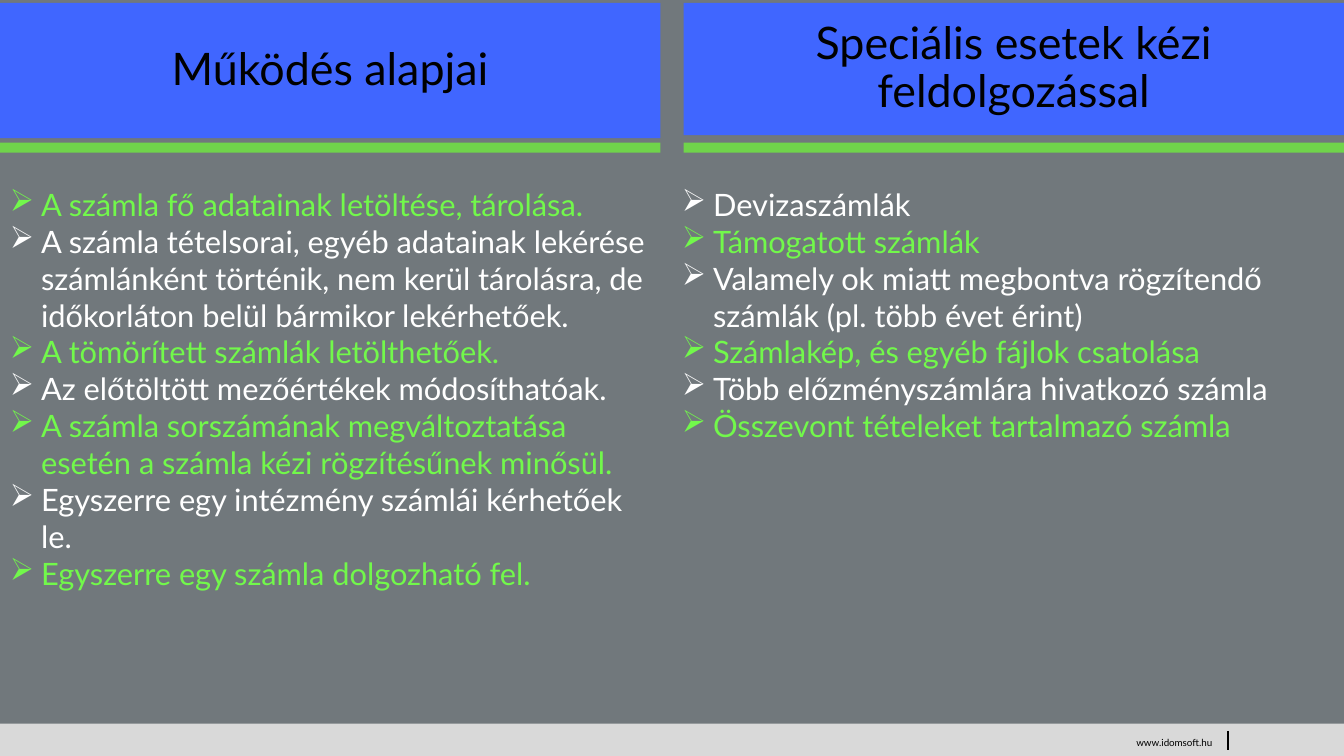
"""Build a two-column slide: headed panels with alternating coloured bullets."""
from dataclasses import dataclass
from itertools import cycle

from lxml.etree import SubElement
from pptx import Presentation
from pptx.dml.color import RGBColor
from pptx.enum.shapes import MSO_CONNECTOR, MSO_SHAPE
from pptx.enum.text import MSO_ANCHOR, MSO_AUTO_SIZE, PP_ALIGN
from pptx.oxml.ns import qn
from pptx.shapes.autoshape import Shape
from pptx.slide import Slide
from pptx.text.text import _Paragraph as Paragraph
from pptx.util import Inches, Length, Pt

WIDTH, HEIGHT = Inches(13.33), Inches(7.5)
FONT = "Lato"
INDENT = Inches(0.31)
GRAY = RGBColor(0x71, 0x78, 0x7C)
LIGHT = RGBColor(0xD9, 0xD9, 0xD9)
BLUE = RGBColor(0x40, 0x66, 0xFF)
BAR_GREEN = RGBColor(0x70, 0xD4, 0x4B)
GREEN = RGBColor(0x72, 0xF8, 0x4B)
WHITE = RGBColor(0xFF, 0xFF, 0xFF)
BLACK = RGBColor(0x00, 0x00, 0x00)


@dataclass(frozen=True)
class Box:
    """Position and size in percent of the slide."""
    x: float
    y: float
    w: float
    h: float

    def emu(self) -> tuple[Length, Length, Length, Length]:
        return across(self.x), down(self.y), across(self.w), down(self.h)


@dataclass(frozen=True)
class Column:
    """A headed list whose items alternate between two colours."""
    title: str
    head: Box
    bar: Box
    body: Box
    colors: tuple[RGBColor, RGBColor]
    items: tuple[str, ...]
    justified: tuple[int, ...] = ()


COLUMNS = (
    Column(
        "Működés alapjai",
        Box(0, 0.4, 49.14, 17.87),
        Box(0, 18.87, 49.14, 1.33),
        Box(0, 23.87, 49.14, 65.47),
        (GREEN, WHITE),
        (
            "A számla fő adatainak letöltése, tárolása.",
            "A számla tételsorai, egyéb adatainak lekérése számlánként történik, "
            "nem kerül tárolásra, de időkorláton belül bármikor lekérhetőek.",
            "A tömörített számlák letölthetőek.",
            "Az előtöltött mezőértékek módosíthatóak.",
            "A számla sorszámának megváltoztatása esetén a számla kézi "
            "rögzítésűnek minősül.",
            "Egyszerre egy intézmény számlái kérhetőek le.",
            "Egyszerre egy számla dolgozható fel.",
        ),
    ),
    Column(
        "Speciális esetek kézi feldolgozással",
        Box(50.86, 0.4, 49.14, 17.47),
        Box(50.86, 18.87, 49.14, 1.33),
        Box(50, 23.87, 49.14, 35.87),
        (WHITE, GREEN),
        (
            "Devizaszámlák",
            "Támogatott számlák",
            "Valamely ok miatt megbontva rögzítendő számlák (pl. több évet érint)",
            "Számlakép, és egyéb fájlok csatolása",
            "Több előzményszámlára hivatkozó számla",
            "Összevont tételeket tartalmazó számla",
        ),
        (3,),
    ),
)


def across(share: float) -> Length:
    return Length(round(WIDTH * share / 100))


def down(share: float) -> Length:
    return Length(round(HEIGHT * share / 100))


def add_rect(s: Slide, box: Box, color: RGBColor) -> Shape:
    sp = s.shapes.add_shape(MSO_SHAPE.RECTANGLE, *box.emu())
    sp.shadow.inherit = False
    sp.fill.solid()
    sp.fill.fore_color.rgb = color
    sp.line.fill.background()
    return sp


def add_text(s: Slide, box: Box) -> Shape:
    sp = s.shapes.add_textbox(*box.emu())
    sp.text_frame.word_wrap = True
    sp.text_frame.auto_size = MSO_AUTO_SIZE.SHAPE_TO_FIT_TEXT
    return sp


def add_run(p: Paragraph, text: str, size: float, color: RGBColor) -> None:
    r = p.add_run()
    r.text = text
    r.font.name = FONT
    r.font.size = Pt(size)
    r.font.color.rgb = color


def set_bullet(p: Paragraph) -> None:
    props = p._p.get_or_add_pPr()
    props.set("marL", str(INDENT))
    props.set("indent", str(-INDENT))
    SubElement(props, qn("a:buChar")).set("char", "➢")


def add_footer(s: Slide) -> None:
    add_rect(s, Box(0, 95.73, 100, 4.27), LIGHT)
    p = add_text(s, Box(80.65, 96.8, 10.28, 2.93)).text_frame.paragraphs[0]
    p.alignment = PP_ALIGN.RIGHT
    add_run(p, "www.idomsoft.hu", 7, BLACK)
    x = across(91.37)
    line = s.shapes.add_connector(MSO_CONNECTOR.STRAIGHT, x, down(96.67), x, down(99.2))
    line.line.color.rgb = BLACK
    line.line.width = Pt(0.75)
    SubElement(line._element.spPr, qn("a:effectLst"))


def add_column(s: Slide, column: Column) -> None:
    tf = add_rect(s, column.head, BLUE).text_frame
    tf.word_wrap = True
    tf.vertical_anchor = MSO_ANCHOR.MIDDLE
    p = tf.paragraphs[0]
    p.alignment = PP_ALIGN.CENTER
    p.line_spacing = 0.9
    add_run(p, column.title, 32, BLACK)
    add_rect(s, column.bar, BAR_GREEN)

    tf = add_text(s, column.body).text_frame
    for i, (item, color) in enumerate(zip(column.items, cycle(column.colors))):
        p = tf.add_paragraph() if i else tf.paragraphs[0]
        set_bullet(p)
        if i in column.justified:
            p.alignment = PP_ALIGN.JUSTIFY
        add_run(p, item, 22, color)


def main() -> None:
    prs = Presentation()
    prs.slide_width, prs.slide_height = WIDTH, HEIGHT
    s = prs.slides.add_slide(prs.slide_layouts[6])
    s.background.fill.solid()
    s.background.fill.fore_color.rgb = GRAY
    add_footer(s)
    for column in COLUMNS:
        add_column(s, column)
    prs.save("out.pptx")


if __name__ == "__main__":
    main()
